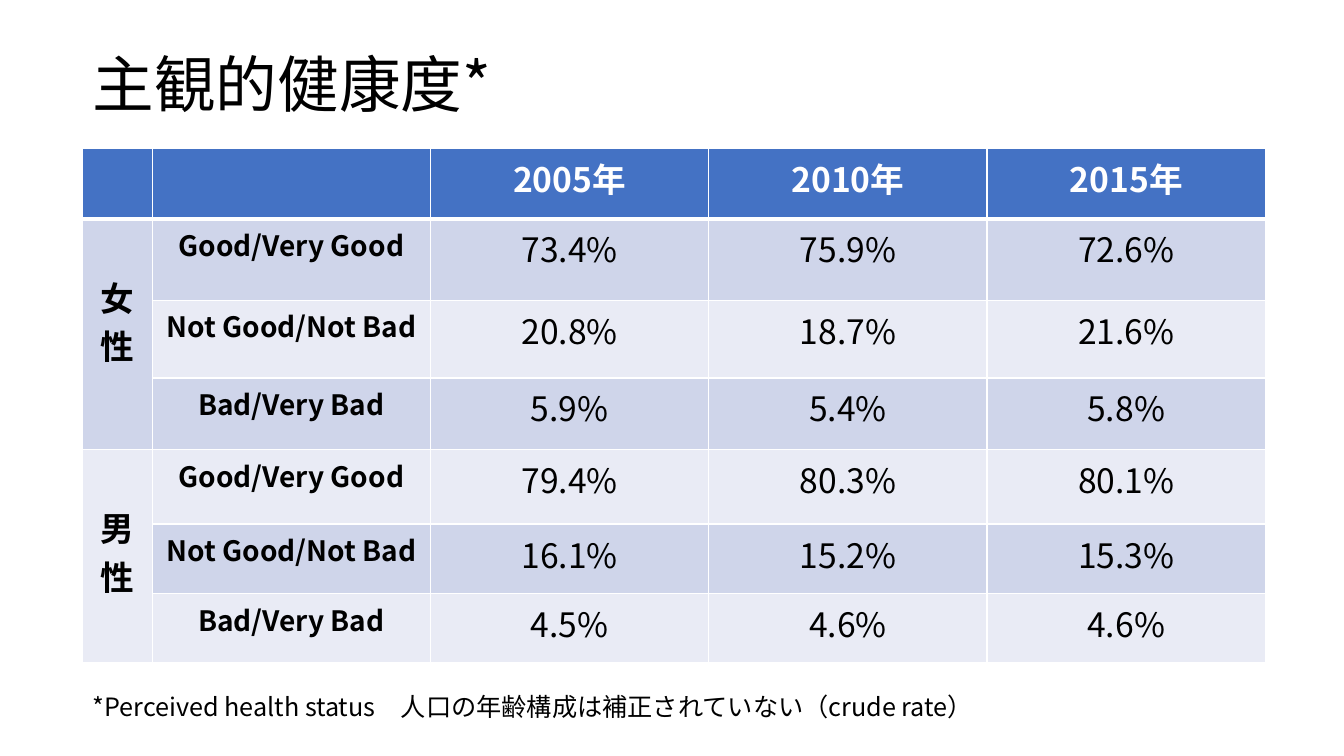
from dataclasses import dataclass

from lxml import etree
from pptx import Presentation
from pptx.dml.color import RGBColor
from pptx.enum import text
from pptx.oxml import ns
from pptx.util import Inches, Pt


@dataclass(frozen=True)
class Theme:
    font: str = "Noto Sans CJK JP"
    ink: str = "000000"
    white: str = "FFFFFF"
    header: str = "4472C4"
    bands: tuple = ("CFD5EA", "E9EBF5")
    title_size: int = 44
    value_size: int = 24
    label_size: int = 20
    note_size: int = 18


LEFT = 0.82
TITLE = "主観的健康度*"
NOTE = "*Perceived health status　人口の年齢構成は補正されていない（crude rate）"
YEARS = ["2005年", "2010年", "2015年"]
RATINGS = ["Good/Very Good", "Not Good/Not Bad", "Bad/Very Bad"]
SHARES = {
    "女性": [
        ["73.4%", "75.9%", "72.6%"],
        ["20.8%", "18.7%", "21.6%"],
        ["5.9%", "5.4%", "5.8%"],
    ],
    "男性": [
        ["79.4%", "80.3%", "80.1%"],
        ["16.1%", "15.2%", "15.3%"],
        ["4.5%", "4.6%", "4.6%"],
    ],
}
COLUMN_WIDTHS = [0.69] + [2.76] * 4
ROW_HEIGHTS = [0.7, 0.81, 0.77, 0.71, 0.74, 0.69, 0.68]


class HealthSlide:
    def __init__(self, presentation, theme):
        self.theme = theme
        self.slide = presentation.slides.add_slide(presentation.slide_layouts[5])

    def add_words(self, paragraph, words, size, color=None, bold=False):
        run = paragraph.add_run()
        run.text = words
        run.font.name = self.theme.font
        run.font.size = Pt(size)
        run.font.bold = bold
        run.font.color.rgb = RGBColor.from_string(color or self.theme.ink)
        east_asian = etree.SubElement(run.font._element, ns.qn("a:ea"))
        east_asian.set("typeface", self.theme.font)

    def title(self, words, left, top, width, height):
        heading = self.slide.shapes.title
        heading.left, heading.top = Inches(left), Inches(top)
        heading.width, heading.height = Inches(width), Inches(height)
        frame = heading.text_frame
        frame.auto_size = text.MSO_AUTO_SIZE.NONE
        frame.vertical_anchor = text.MSO_ANCHOR.BOTTOM
        paragraph = frame.paragraphs[0]
        paragraph.alignment = text.PP_ALIGN.LEFT
        paragraph.line_spacing = 0.9
        self.add_words(paragraph, words, self.theme.title_size)

    def note(self, words, left, top, width, height):
        box = self.slide.shapes.add_textbox(
            Inches(left), Inches(top), Inches(width), Inches(height))
        box.text_frame.word_wrap = True
        self.add_words(box.text_frame.paragraphs[0], words, self.theme.note_size)

    def borders(self, cell, top=1, bottom=1):
        """Rule the cell in white; must precede the fill in the cell's XML."""
        properties = cell._tc.get_or_add_tcPr()
        for side, points in (("L", 1), ("R", 1), ("T", top), ("B", bottom)):
            line = etree.SubElement(properties, ns.qn(f"a:ln{side}"), w=str(Pt(points)))
            fill = etree.SubElement(line, ns.qn("a:solidFill"))
            etree.SubElement(fill, ns.qn("a:srgbClr"), val=self.theme.white)

    def cell_text(self, cell, words, size, color=None, bold=True):
        paragraph = cell.text_frame.paragraphs[0]
        paragraph.alignment = text.PP_ALIGN.CENTER
        self.add_words(paragraph, words, size, color, bold)

    def table(self, left, top):
        theme = self.theme
        grid = self.slide.shapes.add_table(
            len(ROW_HEIGHTS), len(COLUMN_WIDTHS), Inches(left), Inches(top),
            Inches(sum(COLUMN_WIDTHS)), Inches(sum(ROW_HEIGHTS))).table
        for column, width in zip(grid.columns, COLUMN_WIDTHS):
            column.width = Inches(width)
        for index, (row, height) in enumerate(zip(grid.rows, ROW_HEIGHTS)):
            row.height = Inches(height)
            band = theme.bands[(index - 1) % 2] if index else theme.header
            for cell in row.cells:
                self.borders(cell, top=3 if index == 1 else 1, bottom=1 if index else 3)
                cell.fill.solid()
                cell.fill.fore_color.rgb = RGBColor.from_string(band)

        for column, year in enumerate(YEARS, 2):
            self.cell_text(grid.cell(0, column), year, theme.value_size, theme.white)
        for group, (sex, rows) in enumerate(SHARES.items()):
            first = 1 + group * len(RATINGS)
            sex_cell = grid.cell(first, 0)
            sex_cell.merge(grid.cell(first + len(RATINGS) - 1, 0))
            sex_cell.margin_top = Inches(0.53)
            self.cell_text(sex_cell, sex, theme.value_size)
            for row, (rating, shares) in enumerate(zip(RATINGS, rows), first):
                self.cell_text(grid.cell(row, 1), rating, theme.label_size)
                for column, share in enumerate(shares, 2):
                    self.cell_text(grid.cell(row, column), share,
                                   theme.value_size, bold=False)


def main():
    presentation = Presentation()
    presentation.slide_width = Inches(13.33)
    presentation.slide_height = Inches(7.5)
    health = HealthSlide(presentation, Theme())
    health.title(TITLE, LEFT, 0.29, 10, 0.96)
    health.table(LEFT, 1.47)
    health.note(NOTE, LEFT, 6.81, 9.77, 0.4)
    presentation.save("out.pptx")


if __name__ == "__main__":
    main()
